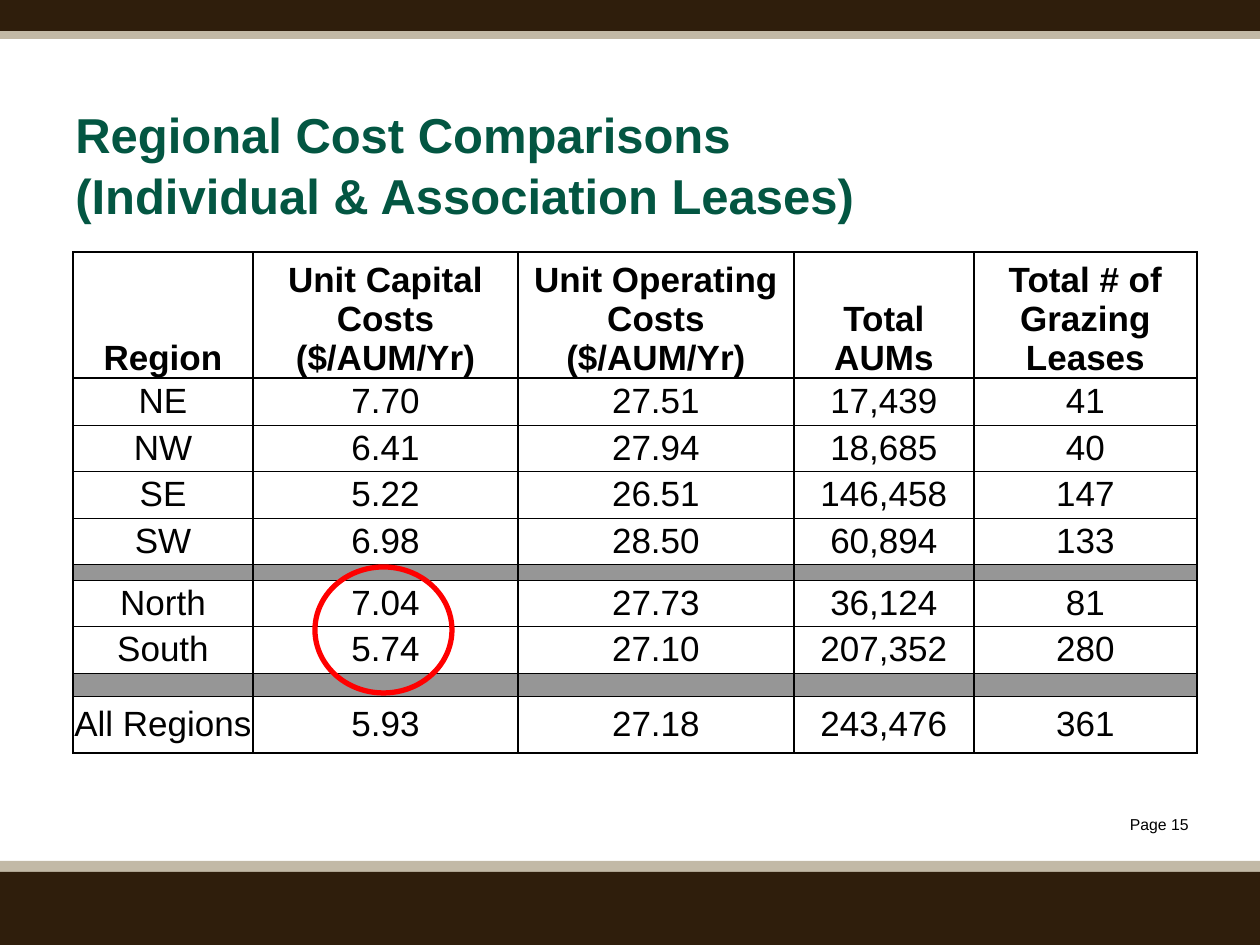
from lxml.etree import SubElement
from pptx import Presentation
from pptx.dml.color import RGBColor
from pptx.enum.shapes import MSO_SHAPE
from pptx.enum.text import MSO_ANCHOR, PP_ALIGN
from pptx.oxml import parse_xml
from pptx.oxml.ns import nsdecls, qn
from pptx.util import Emu, Pt

PX = 914400 // 126
FONT = "Arial"
BLACK = RGBColor(0x00, 0x00, 0x00)
GREEN = RGBColor(0x03, 0x56, 0x42)
BROWN = RGBColor(0x2F, 0x1E, 0x0C)
TAN = RGBColor(0xC2, 0xB9, 0xA6)
GRAY = RGBColor(0x96, 0x96, 0x96)
RED = RGBColor(0xFF, 0x00, 0x00)

# Content
TITLE = "Regional Cost Comparisons (Individual & Association Leases)"
PAGE = "Page 15"
BANDS = [  # top, height, colour
    (861, 21, TAN),
    (872, 73, BROWN),
    (29, 10, TAN),
    (0, 31, BROWN),
]
SPACER = [""] * 5
ROWS = [  # height, cells
    (119, ["Region", "Unit Capital\nCosts ($/AUM/Yr)", "Unit Operating Costs ($/AUM/Yr)",
           "Total AUMs", "Total # of Grazing Leases"]),
    (47, ["NE", "7.70", "27.51", "17,439", "41"]),
    (46, ["NW", "6.41", "27.94", "18,685", "40"]),
    (47, ["SE", "5.22", "26.51", "146,458", "147"]),
    (46, ["SW", "6.98", "28.50", "60,894", "133"]),
    (16, SPACER),
    (46, ["North", "7.04", "27.73", "36,124", "81"]),
    (47, ["South", "5.74", "27.10", "207,352", "280"]),
    (23, SPACER),
    (57, ["All Regions", "5.93", "27.18", "243,476", "361"]),
]
COLUMN_WIDTHS = [180, 265, 276, 180, 223]
TABLE_LEFT, TABLE_TOP = 73, 252


def px(*lengths):
    return [Emu(length * PX) for length in lengths]


def style(paragraph, size, color, bold=False, align=PP_ALIGN.LEFT):
    font = paragraph.font
    font.name, font.size, font.bold = FONT, Pt(size), bold
    font.color.rgb = color
    paragraph.alignment = align


def add_text(slide, box, text, *look):
    frame = slide.shapes.add_textbox(*px(*box)).text_frame
    frame.word_wrap = True
    frame.text = text
    style(frame.paragraphs[0], *look)
    return frame.paragraphs[0]


def set_borders(cell, top, bottom):
    widths = {"lnL": 1, "lnR": 1, "lnT": top, "lnB": bottom}
    for position, (side, width) in enumerate(widths.items()):
        cell._tc.get_or_add_tcPr().insert(position, parse_xml(
            f'<a:{side} {nsdecls("a")} w="{Pt(width)}"><a:solidFill>'
            f'<a:srgbClr val="{BLACK}"/></a:solidFill></a:{side}>'))


def fill_cell(cell, text, row):
    header, last = row == 0, row == len(ROWS) - 1
    cell.margin_left = cell.margin_right = cell.margin_top = cell.margin_bottom = 0
    cell.vertical_anchor = MSO_ANCHOR.BOTTOM if header else MSO_ANCHOR.MIDDLE
    cell.text = text
    if text:
        cell.fill.background()
        for paragraph in cell.text_frame.paragraphs:
            style(paragraph, 20, BLACK, header, PP_ALIGN.CENTER)
    else:
        cell.fill.solid()
        cell.fill.fore_color.rgb = GRAY
        # A tiny end mark lets the spacer row stay thin
        SubElement(cell.text_frame.paragraphs[0]._p, qn("a:endParaRPr"), sz="400")
    set_borders(cell, 1 if row < 2 else 0.5, 1 if header or last else 0.5)


def main():
    deck = Presentation()
    deck.slide_width, deck.slide_height = px(1260, 945)
    slide = deck.slides.add_slide(deck.slide_layouts[6])

    # Bands along the top and bottom
    for top, height, color in BANDS:
        band = slide.shapes.add_shape(MSO_SHAPE.RECTANGLE, *px(0, top, 1260, height))
        band.shadow.inherit = False
        band.fill.solid()
        band.fill.fore_color.rgb = color
        band.line.fill.background()

    # Page number and title
    add_text(slide, (1065, 809, 136, 32), PAGE, 9, BLACK, False, PP_ALIGN.RIGHT)
    title = add_text(slide, (63, 95, 903, 101), TITLE, 28, GREEN, True)
    title.line_spacing = 1.05

    # Cost table
    table_height = sum(height for height, _ in ROWS)
    table = slide.shapes.add_table(
        len(ROWS), len(COLUMN_WIDTHS),
        *px(TABLE_LEFT, TABLE_TOP, sum(COLUMN_WIDTHS), table_height)).table
    table.first_row = table.horz_banding = False
    for column, width in zip(table.columns, COLUMN_WIDTHS):
        column.width = Emu(width * PX)
    for row, (height, texts) in enumerate(ROWS):
        table.rows[row].height = Emu(height * PX)
        for column, text in enumerate(texts):
            fill_cell(table.cell(row, column), text, row)

    # Ring around the North and South capital costs
    ring = slide.shapes.add_shape(MSO_SHAPE.OVAL, *px(315, 567, 137, 126))
    ring.shadow.inherit = False
    ring.fill.background()
    ring.line.color.rgb = RED
    ring.line.width = Pt(3)

    deck.save("out.pptx")


if __name__ == "__main__":
    main()
